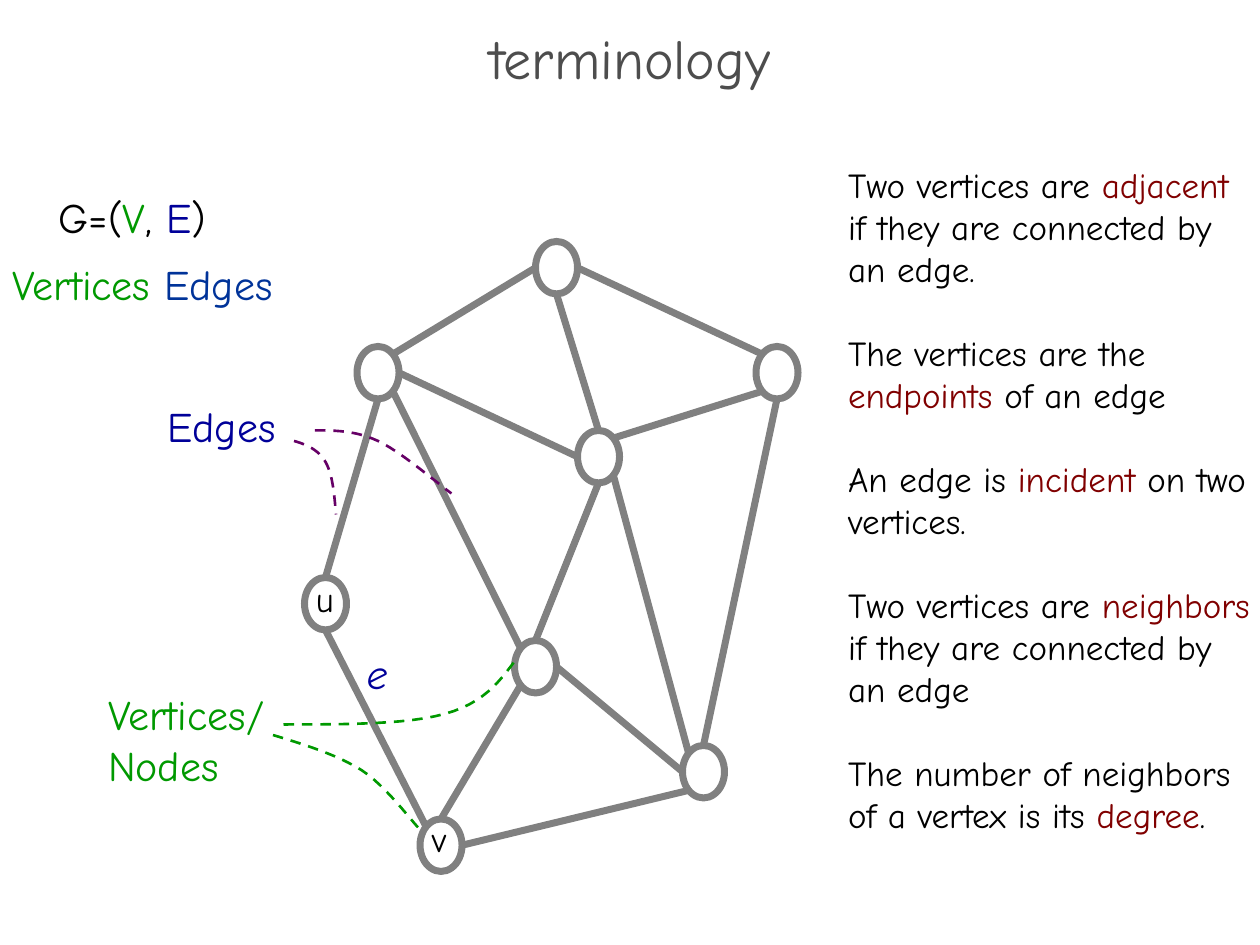
from lxml import etree
from pptx import Presentation
from pptx.dml.color import RGBColor
from pptx.enum.dml import MSO_LINE
from pptx.enum.shapes import MSO_CONNECTOR, MSO_SHAPE
from pptx.enum.text import MSO_ANCHOR, MSO_AUTO_SIZE, PP_ALIGN
from pptx.oxml.ns import qn
from pptx.util import Pt

OVAL, STRAIGHT, DASH = MSO_SHAPE.OVAL, MSO_CONNECTOR.STRAIGHT, MSO_LINE.DASH
FIT, MIDDLE, CENTER = MSO_AUTO_SIZE.SHAPE_TO_FIT_TEXT, MSO_ANCHOR.MIDDLE, PP_ALIGN.CENTER

BLACK, GRAY, TITLE_GRAY, WHITE = "000000", "808080", "4D4D4D", "FFFFFF"
GREEN, BLUE, LIGHT_BLUE, PURPLE, RED = "009900", "000099", "003399", "660066", "800000"
NODE_W, NODE_H = 24, 30
DIAGONAL = 0.71
SITES = {"N": (0, -1), "S": (0, 1), "E": (1, 0), "W": (-1, 0),
         "NE": (DIAGONAL, -DIAGONAL), "NW": (-DIAGONAL, -DIAGONAL),
         "SE": (DIAGONAL, DIAGONAL), "SW": (-DIAGONAL, DIAGONAL)}


def rgb(color):
    return RGBColor.from_string(color)


def bezier(p0, p1, p2, p3, steps=12):
    """Points along a cubic curve, without its start."""
    for i in range(1, steps + 1):
        t = i / steps
        u = 1 - t
        yield tuple(u**3 * a + 3 * u * u * t * b + 3 * u * t * t * c + t**3 * d
                    for a, b, c, d in zip(p0, p1, p2, p3))


class SlideBuilder:
    font = "Comic Neue"

    def __init__(self, slide):
        self.s = slide

    def style(self, r, size, color, italic=None):
        r.font.name, r.font.size, r.font.italic = self.font, Pt(size), italic
        r.font.color.rgb = rgb(color)

    def outline(self, shape, color, width):
        shape.line.color.rgb = rgb(color)
        shape.line.width = Pt(width)

    def title(self, text, x, y, w, h):
        sp = self.s.shapes.title
        sp.left, sp.top, sp.width, sp.height = Pt(x), Pt(y), Pt(w), Pt(h)
        tf = sp.text_frame
        tf.text = text
        tf.vertical_anchor = MIDDLE
        p = tf.paragraphs[0]
        p.alignment, p.line_spacing = CENTER, 0.7
        self.style(p.runs[0], 32, TITLE_GRAY)

    def text(self, paragraphs, x, y, w, h, size=24, wrap=False, gap=0, italic=None):
        """Each paragraph is a list of (text, color) runs."""
        tf = self.s.shapes.add_textbox(Pt(x), Pt(y), Pt(w), Pt(h)).text_frame
        tf.word_wrap, tf.auto_size = wrap, FIT
        for i, parts in enumerate(paragraphs):
            p = tf.add_paragraph() if i else tf.paragraphs[0]
            p.space_before = Pt(gap if i else 0)
            for text, color in parts:
                r = p.add_run()
                r.text = text
                self.style(r, size, color, italic)

    def node(self, cx, cy):
        sp = self.s.shapes.add_shape(OVAL, Pt(cx - NODE_W / 2), Pt(cy - NODE_H / 2),
                                     Pt(NODE_W), Pt(NODE_H))
        sp.shadow.inherit = False
        sp.fill.solid()
        sp.fill.fore_color.rgb = rgb(WHITE)
        self.outline(sp, GRAY, 4)

    def edge(self, start, start_site, end, end_site):
        ends = []
        for (cx, cy), site in ((start, start_site), (end, end_site)):
            dx, dy = SITES[site]
            ends += [Pt(cx + dx * NODE_W / 2), Pt(cy + dy * NODE_H / 2)]
        line = self.s.shapes.add_connector(STRAIGHT, *ends)
        self.outline(line, GRAY, 4)
        etree.SubElement(line._element.spPr, qn("a:effectLst"))

    def curve(self, color, start, *pieces):
        """Dashed curve; each piece is two control points and an end."""
        points, here = [], start
        for piece in pieces:
            points += bezier(here, *piece)
            here = piece[-1]
        fb = self.s.shapes.build_freeform(Pt(start[0]), Pt(start[1]))
        fb.add_line_segments([(Pt(x), Pt(y)) for x, y in points], close=False)
        sp = fb.convert_to_shape()
        sp.shadow.inherit = False
        sp.fill.background()
        self.outline(sp, color, 1.5)
        sp.line.dash_style = DASH


def main():
    prs = Presentation()
    prs.slide_width, prs.slide_height = Pt(720), Pt(540)
    b = SlideBuilder(prs.slides.add_slide(prs.slide_layouts[5]))
    b.title("terminology", 0, 19.5, 720, 36)

    # Graph: nodes by centre, edges by the sides they join
    nodes = {"top": (318, 153), "left": (216, 213), "middle": (342, 261),
             "inner": (306, 381), "u": (186, 345), "right": (444, 213),
             "v": (252, 483), "corner": (402, 441)}
    edges = [("top", "W", "left", "NE"), ("left", "S", "u", "N"),
             ("u", "S", "v", "NW"), ("v", "E", "corner", "SW"),
             ("top", "E", "right", "NW"), ("top", "S", "middle", "N"),
             ("left", "E", "middle", "W"), ("left", "SE", "inner", "NW"),
             ("middle", "S", "inner", "N"), ("inner", "SW", "v", "N"),
             ("right", "SW", "middle", "NE"), ("inner", "E", "corner", "W"),
             ("right", "S", "corner", "N"), ("middle", "SE", "corner", "NW")]
    for center in nodes.values():
        b.node(*center)
    for start, start_site, end, end_site in edges:
        b.edge(nodes[start], start_site, nodes[end], end_site)

    # Callouts with dashed pointers
    b.text([[("Vertices/", GREEN)], [("Nodes", GREEN)]], 54.7, 390, 107.3, 65.5)
    b.curve(GREEN, (162, 414), ((197, 414), (233, 414), (254, 408)),
            ((276, 402), (285, 390), (294, 378)))
    b.curve(GREEN, (156, 420), ((174, 425.5), (192, 431), (206.5, 440)),
            ((220.5, 449), (235, 469), (240, 474)))
    b.text([[("Edges", BLUE)]], 88.5, 225.5, 83.5, 36.5)
    b.curve(PURPLE, (180, 246), ((191.5, 246), (203, 246), (216, 252)),
            ((229, 258), (251, 277), (258, 282)))
    b.curve(PURPLE, (168, 252), ((175, 254), (182, 257), (186, 264)),
            ((190, 271), (191, 282), (192, 294)))

    # Definitions
    b.text([
        [("Two vertices are ", BLACK), ("adjacent ", RED),
         ("if they are connected by an edge.", BLACK)],
        [("The vertices are the ", BLACK), ("endpoints", RED), (" of an edge", BLACK)],
        [("An edge is ", BLACK), ("incident ", RED), ("on two vertices.", BLACK)],
        [("Two vertices are ", BLACK), ("neighbors", RED),
         (" if they are connected by an edge", BLACK)],
        [("The number of neighbors of a vertex is its ", BLACK), ("degree", RED),
         (".", BLACK)],
    ], 477.5, 90, 248.5, 443.5, size=20, wrap=True, gap=24)

    # Notation and labels
    b.text([[("G=(", BLACK), ("V", GREEN), (", ", BLACK), ("E", BLUE), (")", BLACK)]],
           26.5, 106, 107.5, 36.5)
    b.text([[("v", BLACK)]], 239.75, 463.5, 24.5, 31.5, size=20)
    b.text([[("u", BLACK)]], 173.5, 326.5, 25, 31.5, size=20)
    b.text([[("e", BLUE)]], 202.5, 366.5, 30, 36, italic=True)
    b.text([[("Vertices ", GREEN), ("Edges", LIGHT_BLUE)]], 0, 144, 186, 65.5)

    prs.save("out.pptx")


if __name__ == "__main__":
    main()
